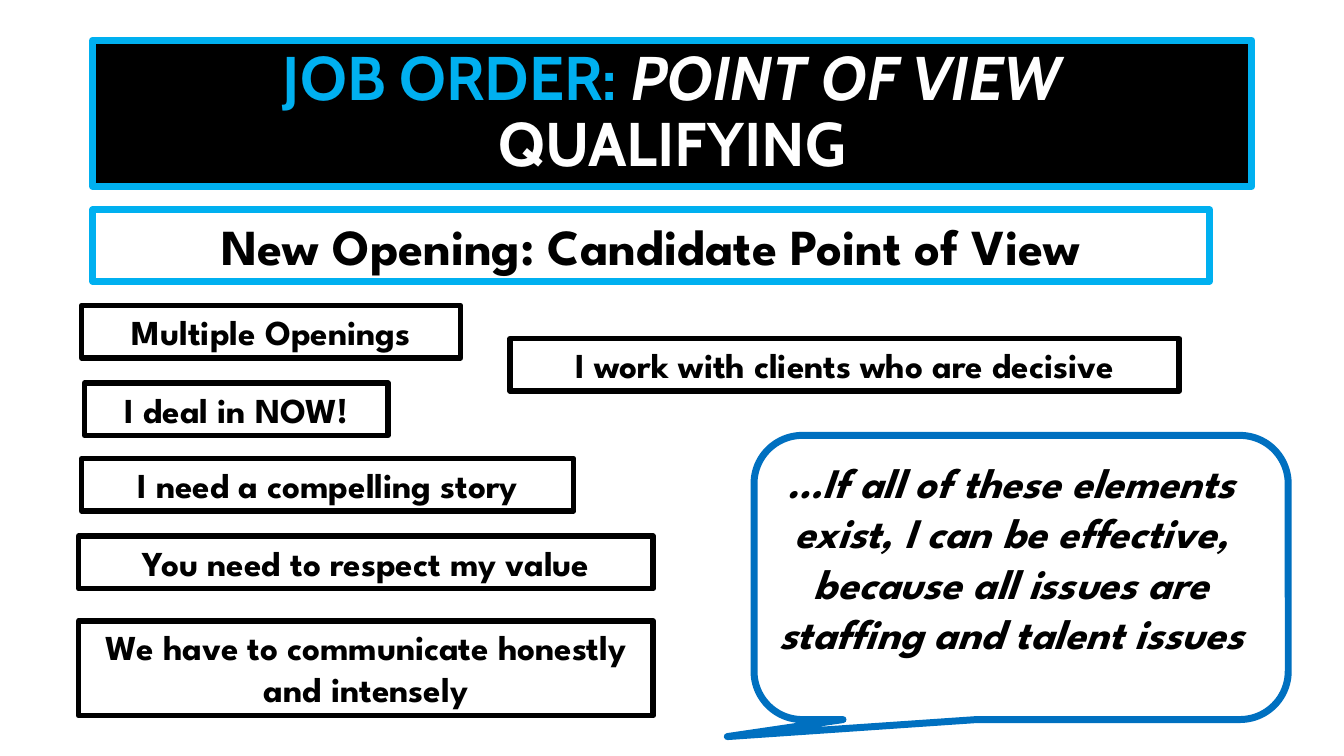
from pptx import Presentation
from pptx.dml.color import RGBColor
from pptx.enum.shapes import MSO_SHAPE as SHAPE
from pptx.enum.text import MSO_ANCHOR as ANCHOR, PP_ALIGN as ALIGN
from pptx.util import Pt

BLACK = RGBColor(0x00, 0x00, 0x00)
WHITE = RGBColor(0xFF, 0xFF, 0xFF)
SKY = RGBColor(0x00, 0xB0, 0xF0)
BLUE = RGBColor(0x00, 0x70, 0xC0)
TITLE_FONT, BODY_FONT = "Cabin", "League Spartan"

# Title runs: text, colour, italic
TITLE = [
    ("JOB ORDER: ", SKY, False),
    ("POINT OF VIEW ", WHITE, True),
    ("QUALIFYING", WHITE, False),
]
SUBTITLE = "New Opening: Candidate Point of View"
CONCLUSION = ("…If all of these elements exist, I can be effective, "
              "because all issues are staffing and talent issues")
# Statements: text, left, top, width, number of lines
STATEMENTS = [
    ("Multiple Openings", 58.3, 218.2, 270.7, 1),
    ("I work with clients who are decisive", 364.3, 241.9, 478.1, 1),
    ("I deal in NOW!", 60.5, 273.6, 216.7, 1),
    ("I need a compelling story", 58.3, 327.6, 351.4, 1),
    ("You need to respect my value", 56.2, 383, 410.4, 1),
    ("We have to communicate honestly and intensely", 56.2, 443.5, 410.4, 2),
]
LINE_HEIGHT, BOX_PADDING = 30.2, 7.2


def add_box(s, box, line, weight, fill=None, kind=SHAPE.RECTANGLE):
    sp = s.shapes.add_shape(kind, *map(Pt, box))
    sp.shadow.inherit = False
    if fill is None:
        sp.fill.background()
    else:
        sp.fill.solid()
        sp.fill.fore_color.rgb = fill
    sp.line.color.rgb = line
    sp.line.width = Pt(weight)
    return sp


def add_text(sp, runs, size, font=BODY_FONT, anchor=ANCHOR.TOP, spacing=None):
    """Fill a shape with one centred bold paragraph of (text, colour, italic) runs."""
    tf = sp.text_frame
    tf.word_wrap = True
    tf.vertical_anchor = anchor
    p = tf.paragraphs[0]
    p.alignment = ALIGN.CENTER
    p.line_spacing = spacing
    for text, color, italic in runs:
        r = p.add_run()
        r.text = text
        r.font.name = font
        r.font.size = Pt(size)
        r.font.bold = True
        r.font.italic = italic
        r.font.color.rgb = color


prs = Presentation()
prs.slide_width, prs.slide_height = Pt(960), Pt(540)
s = prs.slides.add_slide(prs.slide_layouts[6])

title = add_box(s, (66.2, 28.8, 828, 104.4), SKY, 5, fill=BLACK)
add_text(title, TITLE, 44, font=TITLE_FONT, anchor=ANCHOR.MIDDLE, spacing=0.9)

subtitle = add_box(s, (66.2, 149.8, 797.8, 51.1), SKY, 5)
add_text(subtitle, [(SUBTITLE, BLACK, False)], 36)

callout = add_box(s, (538.6, 311, 381.6, 203), BLUE, 5,
                  kind=SHAPE.ROUNDED_RECTANGULAR_CALLOUT)
for i, value in enumerate((-0.55, 0.56, 0.17)):
    callout.adjustments[i] = value
conclusion = s.shapes.add_textbox(*map(Pt, (541.4, 322.6, 362.2, 189.4)))
add_text(conclusion, [(CONCLUSION, BLACK, True)], 30)

for text, left, top, width, lines in STATEMENTS:
    height = BOX_PADDING + lines * LINE_HEIGHT
    statement = add_box(s, (left, top, width, height), BLACK, 4)
    add_text(statement, [(text, BLACK, False)], 25)

prs.save("out.pptx")
